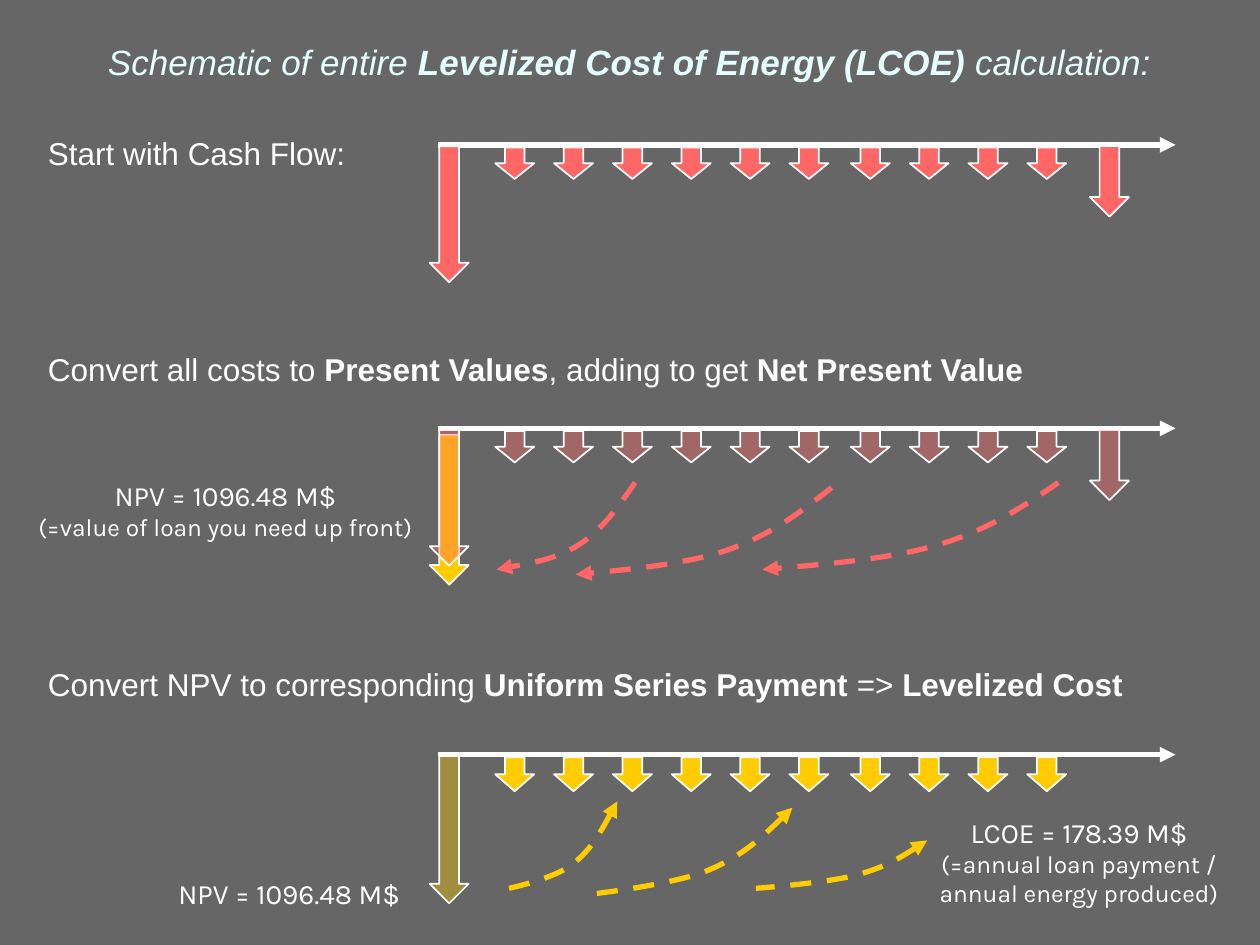
from dataclasses import dataclass

from lxml.etree import SubElement
from pptx import Presentation
from pptx.dml.color import RGBColor
from pptx.enum.dml import MSO_LINE_DASH_STYLE as Dash
from pptx.enum.shapes import MSO_CONNECTOR as Connector, MSO_SHAPE as Shape
from pptx.enum.text import MSO_ANCHOR as Anchor, MSO_AUTO_SIZE as AutoSize, PP_ALIGN as Align
from pptx.oxml.ns import qn
from pptx.util import Inches, Pt


@dataclass(frozen=True)
class Theme:
    background: str = "666666"
    title: str = "E5FFFF"
    white: str = "FFFFFF"
    cost: str = "FF6666"
    payment: str = "FFCC00"
    heading_font: str = "Arial"
    label_font: str = "Karla"
    title_size: int = 20
    heading_size: int = 18
    label_size: int = 16
    note_size: int = 14
    outline: int = 1
    heavy_line: int = 3
    faded: int = 39  # opacity in percent


THEME = Theme()
ARROW_WIDTH = 0.31
YEARS = 10
CURVE = [(1, 0), (0.88, 0.28), (0.76, 0.55), (0.59, 0.72), (0.42, 0.89), (0, 1), (0, 1)]


@dataclass(frozen=True)
class Curve:
    left: float
    top: float
    width: float
    height: float = 0.69


@dataclass(frozen=True)
class Timeline:
    axis: float
    first_height: float
    first_color: str
    first_opacity: int
    annual_height: float
    annual_color: str
    annual_opacity: int
    has_final: bool = False
    npv_height: float = 0
    curves: tuple[Curve, ...] = ()
    curve_end: str = "tailEnd"


@dataclass(frozen=True)
class Label:
    left: float
    top: float
    width: float
    height: float
    value: str
    note: str = ""


# Content: text runs are (wording, bold)
TITLE = [("Schematic of entire ", False), ("Levelized Cost of Energy (LCOE) ", True),
         ("calculation:", False)]
HEADINGS = [
    (0, [("Start with Cash Flow:", False)]),
    (102, [("Convert all costs to ", False), ("Present Values", True),
           (", adding to get ", False), ("Net Present Value", True)]),
    (158.5, [("Convert NPV to corresponding ", False), ("Uniform Series Payment ", True),
             ("=> ", False), ("Levelized Cost", True)]),
]
TIMELINES = [
    Timeline(1.15, 1.08, THEME.cost, 100, 0.25, THEME.cost, 100, has_final=True),
    Timeline(3.4, 1.08, THEME.cost, THEME.faded, 0.25, THEME.cost, THEME.faded,
             has_final=True, npv_height=1.19,
             curves=(Curve(3.94, 3.83, 1.1), Curve(4.57, 3.87, 2.03),
                     Curve(6.05, 3.83, 2.35))),
    Timeline(5.99, 1.17, THEME.payment, THEME.faded, 0.27, THEME.payment, 100,
             curves=(Curve(4.04, 6.36, 0.86), Curve(4.66, 6.41, 1.63),
                     Curve(6, 6.67, 1.36, 0.38)), curve_end="headEnd"),
]
LABELS = [
    Label(0, 3.75, 3.58, 0.6, "NPV = 1096.48 M$", "(=value of loan you need up front)"),
    Label(7.13, 6.42, 2.87, 0.84, "LCOE = 178.39 M$",
          "(=annual loan payment / annual energy produced)"),
    Label(0.67, 6.91, 3.25, 0.36, "NPV = 1096.48 M$"),
]


def add_run(para, text: str, **formats) -> None:
    span = para.add_run()
    span.text = text
    color = formats.pop("color")
    for name, value in formats.items():
        setattr(span.font, name, value)
    span.font.color.rgb = RGBColor.from_string(color)


def format_frame(frame, **formats) -> None:
    margins = {f"margin_{side}": Inches(0.05) for side in ("left", "top", "right", "bottom")}
    for name, value in {"word_wrap": True, **margins, **formats}.items():
        setattr(frame, name, value)


def place(box, left: float, top: float, width: float, height: float) -> None:
    lengths = {"left": left, "top": top, "width": width, "height": height}
    for name, value in lengths.items():
        setattr(box, name, Inches(value))


def style_line(line, color: str, width: int) -> None:
    line.color.rgb = RGBColor.from_string(color)
    line.width = Pt(width)


def add_arrowhead(shape, end: str) -> None:
    SubElement(shape.line._get_or_add_ln(), qn(f"a:{end}"), type="triangle")


def add_payment(group, left: float, top: float, height: float, color: str,
                opacity: int = 100) -> None:
    arrow = group.shapes.add_shape(Shape.DOWN_ARROW, Inches(left), Inches(top),
                                   Inches(ARROW_WIDTH), Inches(height))
    arrow.shadow.inherit = False
    arrow.fill.solid()
    arrow.fill.fore_color.rgb = RGBColor.from_string(color)
    if opacity < 100:
        fill_color = arrow.fill._xPr.find(qn("a:solidFill"))[0]
        SubElement(fill_color, qn("a:alpha"), val=str(opacity * 1000))
    style_line(arrow.line, THEME.white, THEME.outline)


def add_axis(group, top: float) -> None:
    axis = group.shapes.add_connector(Connector.STRAIGHT, Inches(3.48), Inches(top),
                                      Inches(9.33), Inches(top))
    style_line(axis.line, THEME.white, THEME.heavy_line)
    add_arrowhead(axis, "tailEnd")
    SubElement(axis._element.spPr, qn("a:effectLst"))


def add_curve(group, curve: Curve, color: str, end: str) -> None:
    points = [(Inches(curve.left + x * curve.width), Inches(curve.top + y * curve.height))
              for x, y in CURVE]
    builder = group.shapes.build_freeform(*points[0])
    builder.add_line_segments(points[1:], close=False)
    shape = builder.convert_to_shape()
    # Regroup the six line points as two cubic segments
    segments = list(shape._element.iter(qn("a:lnTo")))
    outline = segments[0].getparent()
    for start in (0, 3):
        cubic = SubElement(outline, qn("a:cubicBezTo"))
        for segment in segments[start:start + 3]:
            cubic.append(segment[0])
            outline.remove(segment)
    shape.shadow.inherit = False
    shape.fill.background()
    style_line(shape.line, color, THEME.heavy_line)
    shape.line.dash_style = Dash.DASH
    add_arrowhead(shape, end)


def add_timeline(page, row: Timeline) -> None:
    group = page.shapes.add_group_shape()
    if row.npv_height:
        add_payment(group, 3.41, row.axis + 0.05, row.npv_height, THEME.payment)
    add_axis(group, row.axis)
    if row.has_final:
        add_payment(group, 8.65, row.axis + 0.01, 0.56, row.annual_color, row.annual_opacity)
    add_payment(group, 3.41, row.axis + 0.01, row.first_height, row.first_color,
                row.first_opacity)
    for year in range(YEARS):
        left = 3.93 + 0.467 * year + (0.02 if year > 5 else 0)
        add_payment(group, left, row.axis + 0.02, row.annual_height, row.annual_color,
                    row.annual_opacity)
    for curve in row.curves:
        add_curve(group, curve, row.annual_color, row.curve_end)


def add_label(page, label: Label) -> None:
    box = page.shapes.add_textbox(Inches(label.left), Inches(label.top),
                                  Inches(label.width), Inches(label.height))
    frame = box.text_frame
    format_frame(frame, auto_size=AutoSize.SHAPE_TO_FIT_TEXT)
    lines = [(label.value, THEME.label_size), (label.note, THEME.note_size)]
    for index, (text, size) in enumerate(line for line in lines if line[0]):
        para = frame.add_paragraph() if index else frame.paragraphs[0]
        para.alignment = Align.CENTER
        add_run(para, text, name=THEME.label_font, size=Pt(size), color=THEME.white)


def fill_title(title) -> None:
    place(title, 0.33, 0.15, 9.33, 0.67)
    format_frame(title.text_frame, vertical_anchor=Anchor.MIDDLE, auto_size=AutoSize.NONE)
    para = title.text_frame.paragraphs[0]
    para.alignment = Align.CENTER
    for text, bold in TITLE:
        add_run(para, text, name=THEME.heading_font, size=Pt(THEME.title_size),
                bold=bold, italic=True, color=THEME.title)


def fill_headings(body) -> None:
    place(body, 0.33, 0.99, 9.67, 5.83)
    format_frame(body.text_frame, margin_top=Inches(0.07), auto_size=AutoSize.NONE)
    for index, (gap, runs) in enumerate(HEADINGS):
        para = body.text_frame.add_paragraph() if index else body.text_frame.paragraphs[0]
        properties = para._p.get_or_add_pPr()
        properties.set("marL", "0")
        properties.set("indent", "0")
        SubElement(properties, qn("a:buNone"))
        para.space_before = Pt(gap)
        for text, bold in runs:
            add_run(para, text, name=THEME.heading_font, size=Pt(THEME.heading_size),
                    bold=bold, color=THEME.white)


def main() -> None:
    deck = Presentation()
    deck.slide_width, deck.slide_height = Inches(10), Inches(7.5)
    page = deck.slides.add_slide(deck.slide_layouts[1])
    page.background.fill.solid()
    page.background.fill.fore_color.rgb = RGBColor.from_string(THEME.background)
    # Title and step headings
    fill_title(page.shapes.title)
    fill_headings(page.placeholders[1])
    # Cash flow diagrams and their values
    for row in TIMELINES:
        add_timeline(page, row)
    for label in LABELS:
        add_label(page, label)
    deck.save("out.pptx")


if __name__ == "__main__":
    main()
